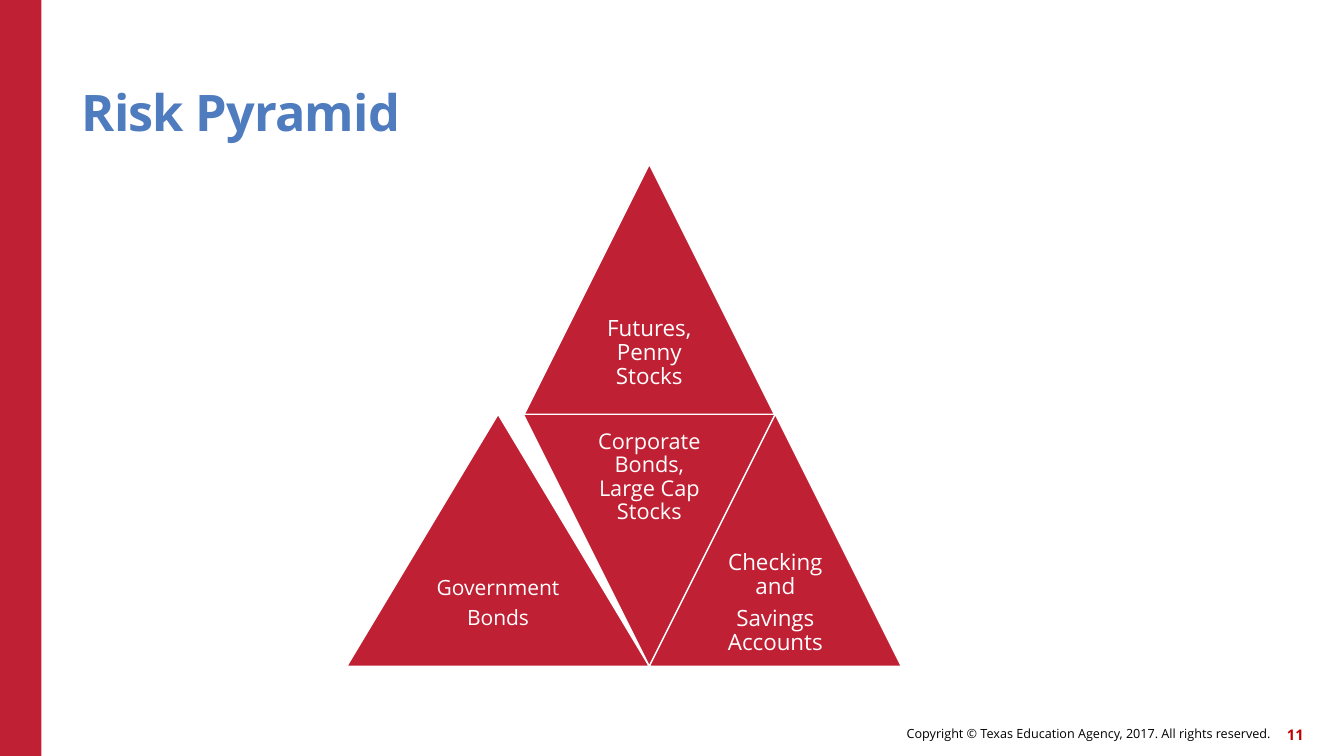
import pptx
import pptx.util
import pptx.dml.color
import pptx.enum.shapes
import pptx.enum.text

Inches, Pt = pptx.util.Inches, pptx.util.Pt
SHAPE = pptx.enum.shapes.MSO_SHAPE
ALIGN = pptx.enum.text.PP_ALIGN
ANCHOR = pptx.enum.text.MSO_ANCHOR

FONT = "Open Sans"
COLORS = {"red": "C02033", "blue": "4E7CBE", "white": "FFFFFF",
          "black": "000000", "number": "C00000"}


def rgb(name):
    return pptx.dml.color.RGBColor.from_string(COLORS[name])


def set_text(sp, lines, size, color, align, anchor=ANCHOR.MIDDLE, bold=False,
             inset=0, spacing=None, after=None):
    """Fill a shape with one formatted paragraph per line."""
    tf = sp.text_frame
    tf.word_wrap = True
    tf.auto_size = pptx.enum.text.MSO_AUTO_SIZE.NONE
    tf.vertical_anchor = anchor
    tf.margin_left = tf.margin_right = Inches(inset)
    tf.margin_top = tf.margin_bottom = Inches(inset)
    for i, line in enumerate(lines):
        p = tf.add_paragraph() if i else tf.paragraphs[0]
        p.alignment = align
        if spacing:
            p.line_spacing = spacing
        if after:
            p.space_after = Pt(after)
        r = p.add_run()
        r.text = line
        r.font.name = FONT
        r.font.size = Pt(size)
        r.font.bold = bold
        r.font.color.rgb = rgb(color)


def add_side_bar(s, x, y, w, h):
    sp = s.shapes.add_shape(SHAPE.RECTANGLE, Inches(x), Inches(y), Inches(w), Inches(h))
    sp.shadow.inherit = False
    sp.fill.solid()
    sp.fill.fore_color.rgb = rgb("red")
    sp.line.fill.background()


def add_title(s, x, y, w, h, text):
    title = s.shapes.title
    title.left, title.top = Inches(x), Inches(y)
    title.width, title.height = Inches(w), Inches(h)
    set_text(title, [text], 36, "blue", ALIGN.LEFT, ANCHOR.BOTTOM, bold=True, spacing=0.9)
    title.text_frame.paragraphs[0].runs[0].font._element.set("spc", "-60")


def add_footer_text(s, x, y, w, h, text, size, color, bold=False):
    sp = s.shapes.add_textbox(Inches(x), Inches(y), Inches(w), Inches(h))
    set_text(sp, [text], size, color, ALIGN.RIGHT, bold=bold)


def add_tier(shapes, x, y, w, h, lines, size, inverted=False):
    """Draw a triangle with its label in the middle half of the wide end."""
    sp = shapes.add_shape(SHAPE.ISOSCELES_TRIANGLE,
                          Inches(x), Inches(y), Inches(w), Inches(h))
    sp.shadow.inherit = False
    sp.rotation = 180 if inverted else 0
    sp.fill.solid()
    sp.fill.fore_color.rgb = rgb("red")
    sp.line.color.rgb = rgb("white")
    sp.line.width = Pt(1)
    label_y = y if inverted else y + h / 2
    label = shapes.add_textbox(Inches(x + w / 4), Inches(label_y),
                               Inches(w / 2), Inches(h / 2))
    set_text(label, lines, size, "white", ALIGN.CENTER, inset=0.06,
             spacing=0.9, after=size * 0.35)


def add_pyramid(s, x, y, side):
    """Stack four triangles; x is the left edge of the top one."""
    shapes = s.shapes.add_group_shape().shapes
    base_y = y + side - 0.02
    left_w = side + 0.5
    add_tier(shapes, x, y, side, side, ["Futures, Penny Stocks"], 16)
    add_tier(shapes, x + side / 2 - left_w, base_y, left_w, side,
             ["Government", "Bonds"], 15)
    add_tier(shapes, x, base_y, side, side,
             ["Corporate Bonds, Large Cap Stocks"], 15.5, inverted=True)
    add_tier(shapes, x + side / 2, base_y, side, side,
             ["Checking and", "Savings Accounts"], 16)


def main():
    prs = pptx.Presentation()
    prs.slide_width, prs.slide_height = Inches(13.33), Inches(7.5)
    s = prs.slides.add_slide(prs.slide_layouts[5])
    add_side_bar(s, 0, 0, 0.41, 7.5)
    add_footer_text(s, 6.14, 7.12, 6.46, 0.32,
                    "Copyright © Texas Education Agency, 2017. All rights reserved.",
                    9, "black")
    add_footer_text(s, 12.51, 7.13, 0.42, 0.32, "11", 10.5, "number", bold=True)
    add_title(s, 0.81, 0.45, 11, 0.96, "Risk Pyramid")
    add_pyramid(s, 5.19, 1.63, 2.5)
    prs.save("out.pptx")


if __name__ == "__main__":
    main()
